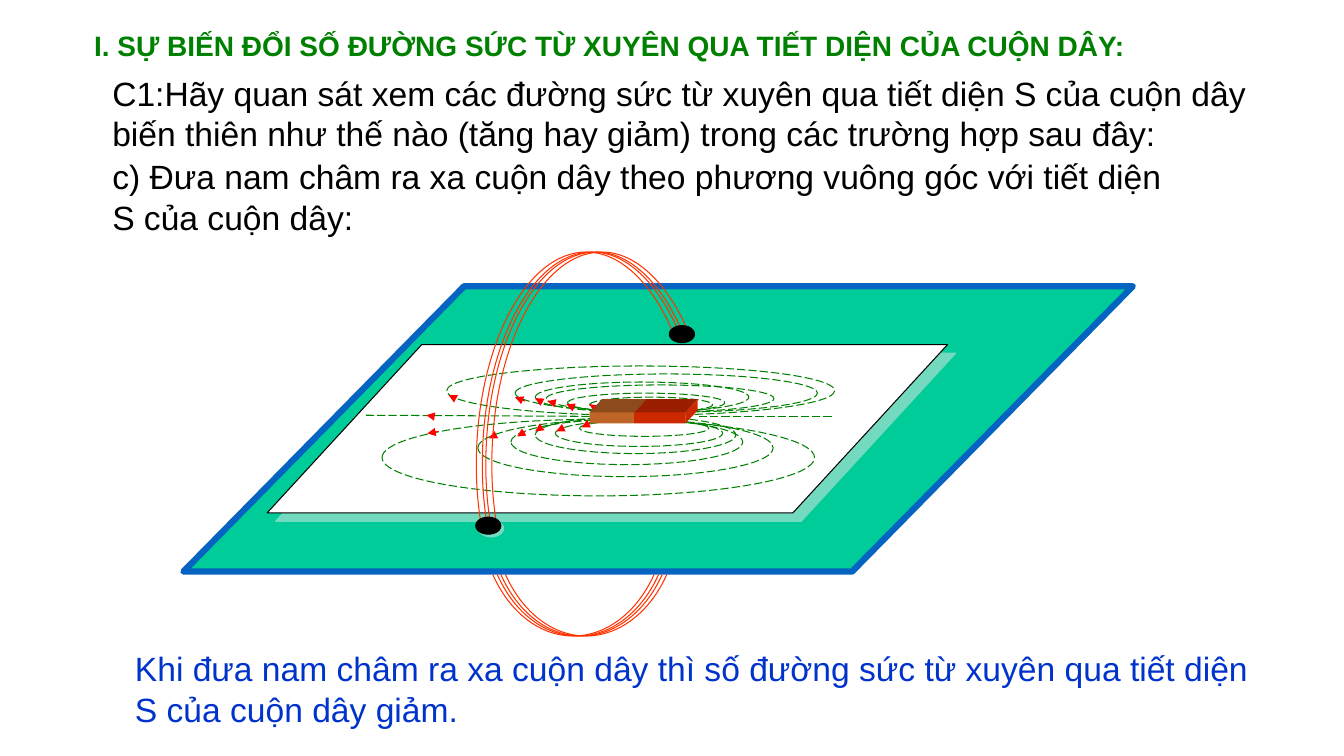
from dataclasses import dataclass
from typing import Optional

import lxml.etree
import pptx
import pptx.dml.color
import pptx.enum.dml
import pptx.enum.shapes
import pptx.enum.text
import pptx.oxml.ns
import pptx.util

Pt = pptx.util.Pt
qn = pptx.oxml.ns.qn
SHAPES = pptx.enum.shapes.MSO_SHAPE
Point = tuple[float, float]
Box = tuple[float, float, float, float]


@dataclass(frozen=True)
class Theme:
    font: str = "Arial"
    heading_size: float = 20
    text_size: float = 24
    green: str = "008000"
    black: str = "000000"
    blue: str = "0033CC"
    white: str = "FFFFFF"
    table: str = "00CC99"
    table_edge: str = "0563C1"
    wire: str = "FF3300"
    arrow: str = "FF0000"
    shadow: str = "E7E6E6"
    thin: float = 0.75
    thick: float = 4.5


THEME = Theme()


@dataclass(frozen=True)
class Caption:
    text: str
    box: Box
    size: float
    color: str
    bold: bool = False


@dataclass(frozen=True)
class Coil:
    """Bezier control points of one turn and the shifts of all turns."""
    points: list[Point]
    shifts: tuple[float, ...]


@dataclass(frozen=True)
class Pole:
    left: float
    width: float
    front: str
    top: str


HEADING = Caption("I. SỰ BIẾN ĐỔI SỐ ĐƯỜNG SỨC TỪ XUYÊN QUA TIẾT DIỆN CỦA CUỘN DÂY:",
                  (60, 16.5, 780, 31.5), THEME.heading_size, THEME.green, True)
QUESTIONS = [
    Caption("C1:Hãy quan sát xem các đường sức từ xuyên qua tiết diện S của cuộn dây biến thiên "
            "như thế nào (tăng hay giảm) trong các trường hợp sau đây:",
            (73, 48.2, 829.4, 65.5), THEME.text_size, THEME.black),
    Caption("c) Đưa nam châm ra xa cuộn dây theo phương vuông góc với tiết diện S của cuộn dây:",
            (73, 108, 767.5, 65.5), THEME.text_size, THEME.black),
]
ANSWER = Caption("Khi đưa nam châm ra xa cuộn dây thì số đường sức từ xuyên qua tiết diện "
                 "S của cuộn dây giảm.",
                 (89.3, 459.4, 812.9, 65.5), THEME.text_size, THEME.blue)

LOWER_COIL = Coil([(357.8, 410.4), (370.1, 437.8), (391.7, 454.3), (415.4, 454.3),
                   (438.5, 454.3), (460.8, 437.8), (473, 410.4)], (0, -2.6, 3.3, -5.8))
UPPER_COIL = Coil([(489.6, 242.6), (474.5, 203.8), (450.7, 180), (425.5, 180),
                   (382.3, 180), (347, 248.4), (347, 331.9),
                   (347, 348.5), (348.5, 364.3), (351.4, 380.2)], (0, -2.5, 4.3, -6.8))

FIELD_LOOPS: list[Box] = [
    (319, 261.4, 277.2, 35.3), (367.9, 267.1, 216, 27.4), (382.3, 272.9, 152.6, 21.6),
    (390.2, 275, 162.7, 19.4), (405.4, 280.8, 112.3, 13.7), (421.2, 283.7, 87.8, 10.8),
    (272.9, 299.5, 308.9, 54.7), (341.3, 299.5, 211, 41), (365, 299.5, 165.6, 32.4),
    (382.3, 297.4, 143.3, 26.6), (396.7, 300.2, 119.5, 18.7), (414, 300.2, 92.2, 11.5),
]
AXIS_LINES: list[tuple[Point, Point]] = [
    ((499, 297.4), (596.2, 297.4)), ((421.2, 297.4), (259.2, 296.6))]
FIELD_ARROWS: list[tuple[Point, Point]] = [
    ((309.6, 297.4), (304.6, 296.6)), ((313.2, 308.2), (305.3, 309.6)),
    ((353.5, 311), (349.2, 313.2)), ((375.1, 308.2), (369.4, 311.8)),
    ((386.6, 305.3), (382.3, 308.2)), ((403.2, 305.3), (397.4, 308.2)),
    ((421.2, 302.4), (415.4, 305.3)), ((324.7, 284.4), (320.4, 282.2)),
    ((375.1, 286.6), (367.9, 283.7)), ((387.4, 287.3), (382.3, 284.4)),
    ((396.7, 288), (391, 286.6)), ((409.7, 290.9), (404.6, 288.7)),
    ((426.2, 292.3), (421.2, 288.7)),
]
POLES = [Pole(421.2, 31.7, "BE6427", "8C4A1D"), Pole(452.9, 36.7, "CC2900", "991F00")]
MAGNET_TOP, MAGNET_HEIGHT = 294.5, 8
DEPTH_X, DEPTH_Y = 8.8, -9.4


def rgb(color: str) -> pptx.dml.color.RGBColor:
    return pptx.dml.color.RGBColor.from_string(color)


def style(shape, fill: Optional[str], line: Optional[str],
          width: float = THEME.thin, shadow: float = 0) -> None:
    """Set fill, outline and, for a positive distance, a pale shadow."""
    shape.shadow.inherit = False
    if fill:
        shape.fill.solid()
        shape.fill.fore_color.rgb = rgb(fill)
    else:
        shape.fill.background()
    if line:
        shape.line.color.rgb = rgb(line)
        shape.line.width = Pt(width)
    else:
        shape.line.fill.background()
    if shadow:
        effects = shape.element.spPr.find(qn("a:effectLst"))
        outer = lxml.etree.SubElement(effects, qn("a:outerShdw"), dist=str(int(Pt(shadow))),
                                      dir="2700000", algn="ctr", rotWithShape="0")
        color = lxml.etree.SubElement(outer, qn("a:srgbClr"), val=THEME.shadow)
        lxml.etree.SubElement(color, qn("a:alpha"), val="50000")


def add_preset(page, kind, box: Box):
    return page.shapes.add_shape(kind, *map(Pt, box))


def add_outline(page, points: list[Point], close: bool):
    corners = [(Pt(x), Pt(y)) for x, y in points]
    builder = page.shapes.build_freeform(*corners[0])
    builder.add_line_segments(corners[1:], close=close)
    return builder.convert_to_shape()


def draw_coil(page, coil: Coil) -> None:
    for shift in coil.shifts:
        turn = add_outline(page, [(x + shift, y) for x, y in coil.points], False)
        style(turn, None, THEME.wire)
        segments = list(turn.element.iter(qn("a:lnTo")))
        for start in range(0, len(segments), 3):
            curve = lxml.etree.Element(qn("a:cubicBezTo"))
            segments[start].addprevious(curve)
            for segment in segments[start:start + 3]:
                curve.append(segment[0])
                segment.getparent().remove(segment)


def draw_line(page, ends: tuple[Point, Point], color: str, arrow: bool) -> None:
    """Draw a red arrow or a dashed field line."""
    (x1, y1), (x2, y2) = ends
    connector = page.shapes.add_connector(
        pptx.enum.shapes.MSO_CONNECTOR.STRAIGHT, Pt(x1), Pt(y1), Pt(x2), Pt(y2))
    connector.line.color.rgb = rgb(color)
    connector.line.width = Pt(THEME.thin)
    properties = connector.element.spPr
    if arrow:
        lxml.etree.SubElement(properties.find(qn("a:ln")), qn("a:tailEnd"), type="triangle")
    else:
        connector.line.dash_style = pptx.enum.dml.MSO_LINE.LONG_DASH
    lxml.etree.SubElement(properties, qn("a:effectLst"))


def draw_magnet(page) -> None:
    def face(x: float, y: float, u: Point, v: Point, color: str) -> None:
        corners = [(x, y), (x + u[0], y + u[1]),
                   (x + u[0] + v[0], y + u[1] + v[1]), (x + v[0], y + v[1])]
        style(add_outline(page, corners, True), color, None)

    depth = (DEPTH_X, DEPTH_Y)
    for pole in POLES:
        front = add_preset(page, SHAPES.RECTANGLE,
                           (pole.left, MAGNET_TOP, pole.width, MAGNET_HEIGHT))
        style(front, pole.front, None)
        face(pole.left, MAGNET_TOP, (pole.width, 0), depth, pole.top)
    last = POLES[-1]
    face(last.left + last.width, MAGNET_TOP, depth, (0, MAGNET_HEIGHT), last.front)


def write(shape, caption: Caption) -> None:
    shape.left, shape.top, shape.width, shape.height = map(Pt, caption.box)
    frame = shape.text_frame
    frame.text = caption.text
    frame.word_wrap = True
    frame.auto_size = pptx.enum.text.MSO_AUTO_SIZE.NONE
    frame.vertical_anchor = pptx.enum.text.MSO_ANCHOR.TOP
    para = frame.paragraphs[0]
    para.alignment = pptx.enum.text.PP_ALIGN.LEFT
    para.space_before = Pt(0)
    settings = para._p.get_or_add_pPr()
    settings.set("marL", "0")
    settings.set("indent", "0")
    lxml.etree.SubElement(settings, qn("a:buNone"))
    font = para.runs[0].font
    font.name, font.size, font.bold = THEME.font, Pt(caption.size), caption.bold
    font.color.rgb = rgb(caption.color)


def main() -> None:
    deck = pptx.Presentation()
    deck.slide_width, deck.slide_height = Pt(960), Pt(540)
    page = deck.slides.add_slide(deck.slide_layouts[3])

    table = add_preset(page, SHAPES.PARALLELOGRAM, (131, 204.5, 678.2, 203.8))
    table.adjustments[0] = 0.984
    style(table, THEME.table, THEME.table_edge, THEME.thick)
    draw_coil(page, LOWER_COIL)
    paper = add_preset(page, SHAPES.PARALLELOGRAM, (190.8, 246.2, 486, 120.2))
    paper.adjustments[0] = 0.919
    style(paper, THEME.white, THEME.black, shadow=8.5)

    for box in FIELD_LOOPS:
        loop = add_preset(page, SHAPES.OVAL, box)
        style(loop, None, THEME.green)
        loop.line.dash_style = pptx.enum.dml.MSO_LINE.LONG_DASH
    for ends in AXIS_LINES:
        draw_line(page, ends, THEME.green, False)
    for ends in FIELD_ARROWS:
        draw_line(page, ends, THEME.arrow, True)
    draw_magnet(page)
    draw_coil(page, UPPER_COIL)
    for left, top, shadow in ((339.8, 369.4, 2.8), (478.1, 232.6, 0)):
        hole = add_preset(page, SHAPES.OVAL, (left, top, 18, 12.2))
        style(hole, THEME.black, THEME.black, shadow=shadow)

    write(page.shapes.title, HEADING)
    for index, question in enumerate(QUESTIONS, start=1):
        write(page.placeholders[index], question)
    write(page.shapes.add_textbox(*map(Pt, ANSWER.box)), ANSWER)
    deck.save("out.pptx")


if __name__ == "__main__":
    main()
